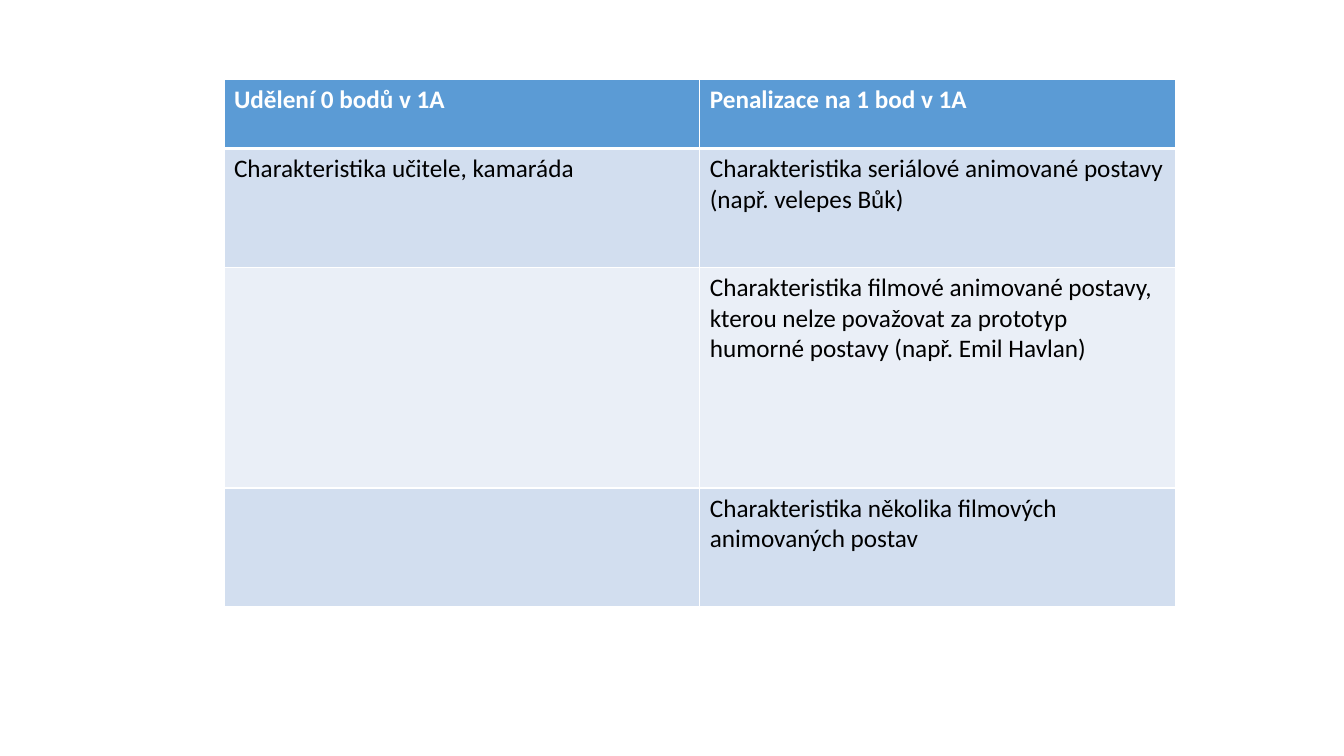
from lxml import etree
from pptx import Presentation
from pptx.dml.color import RGBColor
from pptx.oxml import ns
from pptx.util import Pt

HEADER_FILL = "5B9BD5"
BAND_FILLS = ["EAEFF7", "D2DEEF"]
RULE_COLOR = "FFFFFF"
COLUMN_WIDTH = 339.9
ROW_HEIGHTS = [49, 85, 157.6, 85]

PENALTIES = [
    ("Udělení 0 bodů v 1A", "Penalizace na 1 bod v 1A"),
    ("Charakteristika učitele, kamaráda",
     "Charakteristika seriálové animované postavy (např. velepes Bůk)"),
    ("", "Charakteristika filmové animované postavy, kterou nelze považovat "
         "za prototyp humorné postavy (např. Emil Havlan)"),
    ("", "Charakteristika několika filmových animovaných postav"),
]


def color(hex_code):
    return RGBColor.from_string(hex_code)


def add_rules(cell, widths):
    """Draw the cell borders; widths are points for left, right, top, bottom."""
    properties = cell._tc.get_or_add_tcPr()
    for position, (side, width) in enumerate(zip("LRTB", widths)):
        rule = etree.Element(ns.qn(f"a:ln{side}"), w=str(Pt(width)))
        fill = etree.SubElement(rule, ns.qn("a:solidFill"))
        etree.SubElement(fill, ns.qn("a:srgbClr"), val=RULE_COLOR)
        properties.insert(position, rule)


deck = Presentation()
deck.slide_width, deck.slide_height = Pt(960), Pt(540)
slide = deck.slides.add_slide(deck.slide_layouts[6])

penalty_table = slide.shapes.add_table(
    len(PENALTIES), 2, Pt(160), Pt(57),
    Pt(2 * COLUMN_WIDTH), Pt(sum(ROW_HEIGHTS))).table
for column in penalty_table.columns:
    column.width = Pt(COLUMN_WIDTH)

for row_index, (wordings, height) in enumerate(zip(PENALTIES, ROW_HEIGHTS)):
    row = penalty_table.rows[row_index]
    row.height = Pt(height)
    is_header = row_index == 0
    row_fill = HEADER_FILL if is_header else BAND_FILLS[row_index % 2]
    top_rule = 3 if row_index == 1 else 1
    bottom_rule = 3 if is_header else 1
    for cell, wording in zip(row.cells, wordings):
        cell.fill.solid()
        cell.fill.fore_color.rgb = color(row_fill)
        add_rules(cell, [1, 1, top_rule, bottom_rule])
        cell.text = wording
        font = cell.text_frame.paragraphs[0].font
        font.name, font.size, font.bold = "Calibri", Pt(18), is_header
        font.color.rgb = color("FFFFFF" if is_header else "000000")

deck.save("out.pptx")
